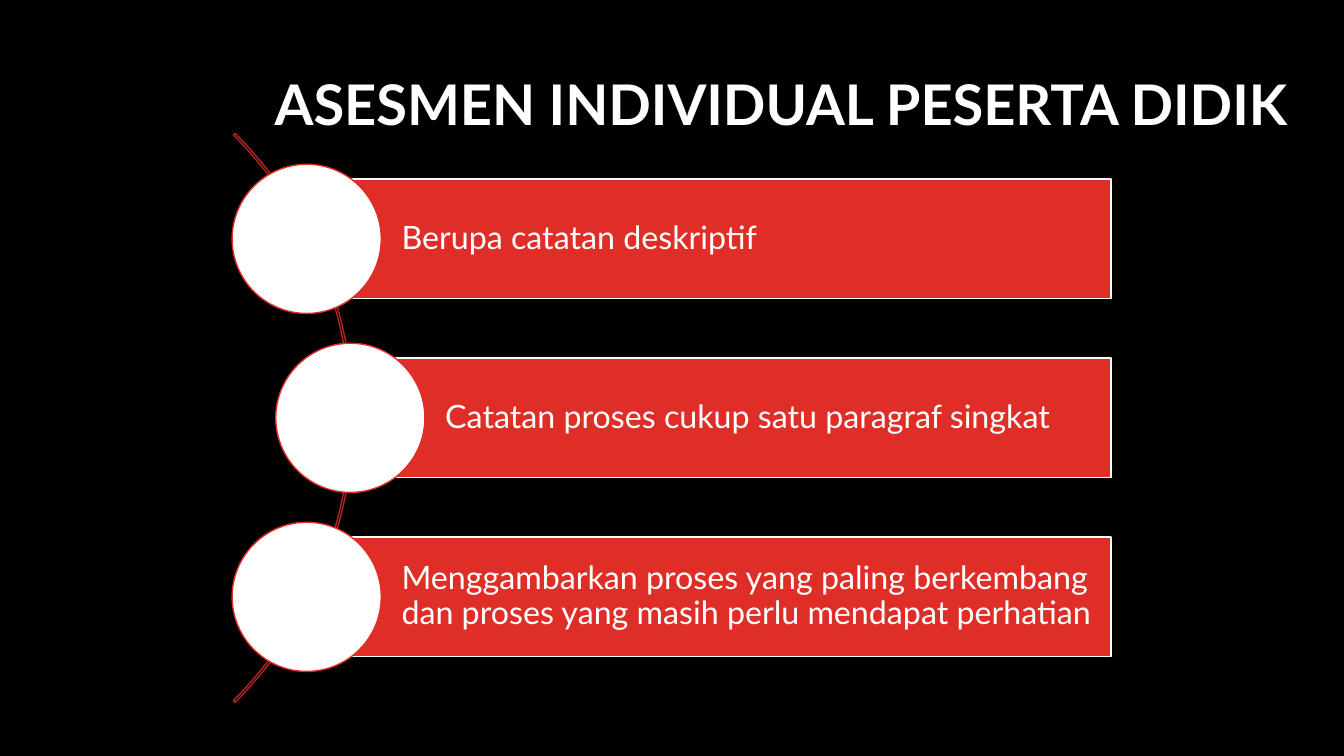
import pptx
import pptx.dml.color
import pptx.enum.shapes
import pptx.enum.text
import pptx.util

Cm = pptx.util.Cm
Pt = pptx.util.Pt
RGBColor = pptx.dml.color.RGBColor
MSO_SHAPE = pptx.enum.shapes.MSO_SHAPE
PP_ALIGN = pptx.enum.text.PP_ALIGN
MSO_ANCHOR = pptx.enum.text.MSO_ANCHOR

BLACK = RGBColor(0x00, 0x00, 0x00)
WHITE = RGBColor(0xFF, 0xFF, 0xFF)
RED = RGBColor(0xDF, 0x2E, 0x28)
DARK_RED = RGBColor(0xB3, 0x25, 0x20)

# Layout in centimetres
ARC_CENTER_X, MIDDLE_Y, ARC_DIAMETER = -1.24, 10.53, 20.27
ROW_PITCH = 4.51
BAR_RIGHT, BAR_HEIGHT = 28.0, 3.02
CIRCLE_DIAMETER = 3.76

# Centre of each circle and the text of its bar
ROWS = [
    (7.73, "Berupa catatan deskriptif"),
    (8.83, "Catatan proses cukup satu paragraf singkat"),
    (7.73, "Menggambarkan proses yang paling berkembang "
           "dan proses yang masih perlu mendapat perhatian"),
]


def write_text(shape, text, size, bold=False, align=PP_ALIGN.LEFT,
               insets=(0.25, 0.25, 0.25, 0.25)):
    frame = shape.text_frame
    frame.word_wrap = True
    frame.auto_size = pptx.enum.text.MSO_AUTO_SIZE.NONE
    frame.vertical_anchor = MSO_ANCHOR.MIDDLE
    (frame.margin_left, frame.margin_top,
     frame.margin_right, frame.margin_bottom) = map(Cm, insets)
    frame.text = text
    paragraph = frame.paragraphs[0]
    paragraph.alignment = align
    paragraph.line_spacing = 0.9
    font = paragraph.runs[0].font
    font.name, font.size, font.bold = "Lato", Pt(size), bold
    font.color.rgb = WHITE


class ArcListSlide:
    def __init__(self, presentation):
        self.slide = presentation.slides.add_slide(presentation.slide_layouts[5])
        self.slide.background.fill.solid()
        self.slide.background.fill.fore_color.rgb = BLACK

    def title(self, text):
        shape = self.slide.shapes.title
        shape.left, shape.top = Cm(1.14), Cm(1.65)
        shape.width, shape.height = Cm(31.55), Cm(2.13)
        write_text(shape, text, 40, bold=True, align=PP_ALIGN.RIGHT)

    def outline_shape(self, kind, left, top, width, height, line, fill=None):
        shape = self.slide.shapes.add_shape(
            kind, Cm(left), Cm(top), Cm(width), Cm(height))
        shape.shadow.inherit = False
        shape.line.color.rgb = line
        shape.line.width = Pt(1)
        if fill is None:
            shape.fill.background()
        else:
            shape.fill.solid()
            shape.fill.fore_color.rgb = fill
        return shape

    def arc(self):
        radius = ARC_DIAMETER / 2
        shape = self.outline_shape(
            MSO_SHAPE.BLOCK_ARC, ARC_CENTER_X - radius, MIDDLE_Y - radius,
            ARC_DIAMETER, ARC_DIAMETER, DARK_RED)
        # Start at 315 degrees, end at 45 degrees, hairline thickness
        for index, value in enumerate((189, 27, 0.003)):
            shape.adjustments[index] = value

    def bar(self, left, center_y, text):
        shape = self.outline_shape(
            MSO_SHAPE.RECTANGLE, left, center_y - BAR_HEIGHT / 2,
            BAR_RIGHT - left, BAR_HEIGHT, WHITE, RED)
        write_text(shape, text, 23, insets=(2.39, 0.15, 0.15, 0.15))

    def circle(self, center_x, center_y):
        radius = CIRCLE_DIAMETER / 2
        self.outline_shape(
            MSO_SHAPE.OVAL, center_x - radius, center_y - radius,
            CIRCLE_DIAMETER, CIRCLE_DIAMETER, RED, WHITE)


def main():
    presentation = pptx.Presentation()
    presentation.slide_width, presentation.slide_height = Cm(33.87), Cm(19.05)
    page = ArcListSlide(presentation)

    # Heading and the arc behind the rows
    page.title("ASESMEN INDIVIDUAL PESERTA DIDIK")
    page.arc()

    # Bars, each starting at the centre of its circle
    for index, (center_x, text) in enumerate(ROWS):
        center_y = MIDDLE_Y + (index - 1) * ROW_PITCH
        page.bar(center_x, center_y, text)
        page.circle(center_x, center_y)

    presentation.save("out.pptx")


if __name__ == "__main__":
    main()
